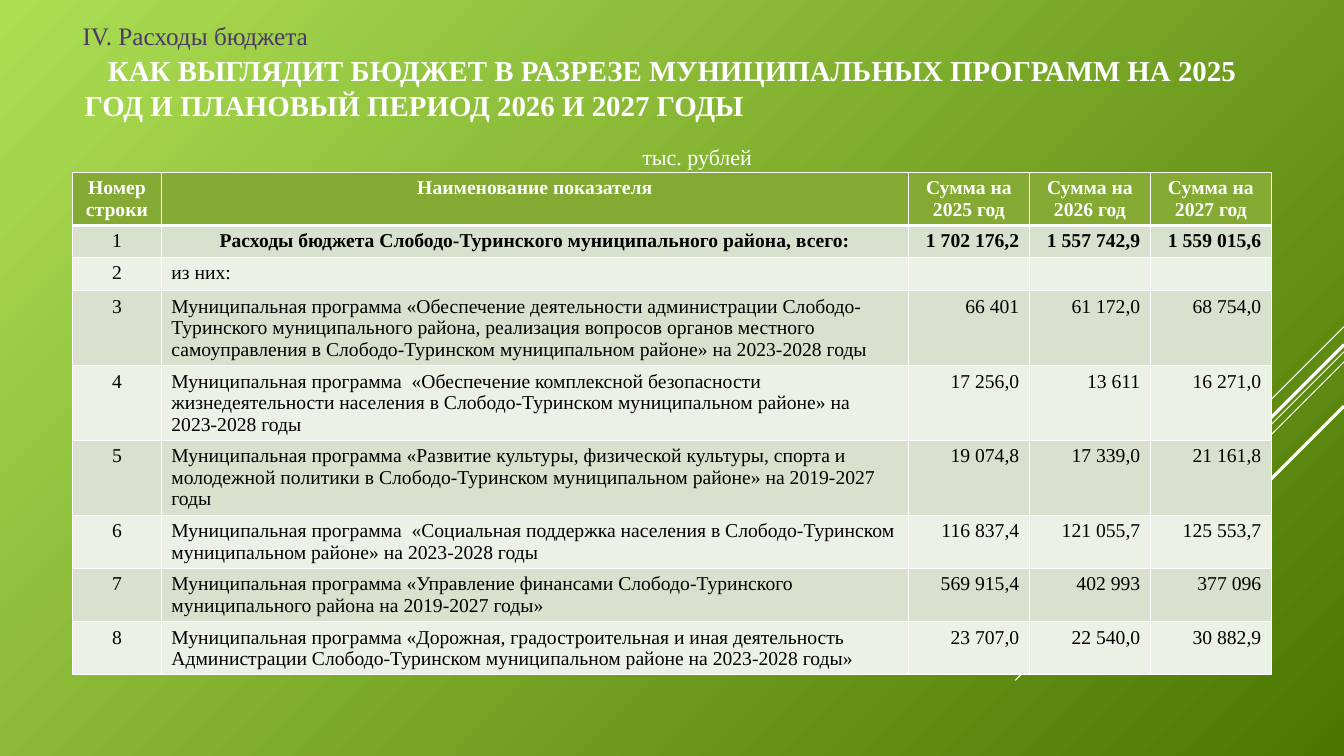
from dataclasses import dataclass

from lxml import etree
from pptx import Presentation
from pptx import util as u
from pptx.dml.color import RGBColor
from pptx.enum import shapes, text
from pptx.oxml import ns


@dataclass(frozen=True)
class Theme:
    font: str = "Times New Roman"
    bg_light: str = "ACDE54"
    bg_dark: str = "4B7700"
    white: str = "FFFFFF"
    black: str = "000000"
    section: str = "4C376B"
    header: str = "84AA33"
    bands: tuple = ("D8E1CD", "ECF1E8")
    section_size: float = 18
    title_size: float = 20.6
    title_leading: float = 25
    units_size: float = 15.7
    table_size: int = 14
    table_leading: float = 15.4
    rule: float = 0.96
    header_rule: float = 3


T = Theme()
LEFT, WIDTH = 0.72, 11.89
ALIGN = text.PP_ALIGN

HEADER = ["Номер строки", "Наименование показателя",
          "Сумма на 2025 год", "Сумма на 2026 год", "Сумма на 2027 год"]
ROWS = [
    ("Расходы бюджета Слободо-Туринского муниципального района, всего:",
     "1 702 176,2", "1 557 742,9", "1 559 015,6"),
    ("из них:", "", "", ""),
    ("Муниципальная программа «Обеспечение деятельности администрации Слободо-Туринского "
     "муниципального района, реализация вопросов органов местного самоуправления в "
     "Слободо-Туринском муниципальном районе» на 2023-2028 годы",
     "66 401", "61 172,0", "68 754,0"),
    ("Муниципальная программа  «Обеспечение комплексной безопасности жизнедеятельности "
     "населения в Слободо-Туринском муниципальном районе» на 2023-2028 годы",
     "17 256,0", "13 611", "16 271,0"),
    ("Муниципальная программа «Развитие культуры, физической культуры, спорта и молодежной "
     "политики в Слободо-Туринском муниципальном районе» на 2019-2027 годы",
     "19 074,8", "17 339,0", "21 161,8"),
    ("Муниципальная программа  «Социальная поддержка населения в Слободо-Туринском "
     "муниципальном районе» на 2023-2028 годы",
     "116 837,4", "121 055,7", "125 553,7"),
    ("Муниципальная программа «Управление финансами Слободо-Туринского муниципального "
     "района на 2019-2027 годы»",
     "569 915,4", "402 993", "377 096"),
    ("Муниципальная программа «Дорожная, градостроительная и иная деятельность "
     "Администрации Слободо-Туринском муниципальном районе на 2023-2028 годы»",
     "23 707,0", "22 540,0", "30 882,9"),
]
COL_WIDTHS = [0.88, 7.41, 1.2, 1.2, 1.2]
LINE_COUNTS = [2, 1, 1, 3, 3, 3, 2, 2, 2]


def rgb(value):
    return RGBColor.from_string(value)


def add_run(p, words, size, color, bold=False):
    r = p.add_run()
    r.text = words
    r.font.name, r.font.size, r.font.bold = T.font, u.Pt(size), bold
    r.font.color.rgb = rgb(color)


def set_indent(p, margin, first_line=0):
    pPr = p._p.get_or_add_pPr()
    pPr.set("marL", str(u.Inches(margin)))
    pPr.set("indent", str(u.Inches(first_line)))


def add_background(s):
    fill = s.background.fill
    fill.gradient()
    fill.gradient_angle = 315
    for stop, color in zip(fill.gradient_stops, (T.bg_light, T.bg_dark)):
        stop.color.rgb = rgb(color)


def add_diagonals(s, right):
    # Each line falls to the left at 45 degrees: start height, run, weight
    for y, run, weight in [(3.24, 1, 0.75), (3.49, 3.26, 0.75), (3.59, 2.07, 0.75),
                           (3.42, 1.91, 2.25), (4.03, 1.39, 2.25)]:
        line = s.shapes.add_connector(
            shapes.MSO_CONNECTOR.STRAIGHT, u.Inches(right), u.Inches(y),
            u.Inches(right - run), u.Inches(y + run))
        line.line.color.rgb = rgb(T.white)
        line.line.width = u.Pt(weight)
        etree.SubElement(line._element.spPr, ns.qn("a:effectLst"))


def add_section(s, x, y, w, h):
    sp = s.shapes.add_textbox(u.Inches(x), u.Inches(y), u.Inches(w), u.Inches(h))
    tf = sp.text_frame
    tf.word_wrap = True
    tf.vertical_anchor = text.MSO_ANCHOR.MIDDLE
    add_run(tf.paragraphs[0], "IV. Расходы бюджета", T.section_size, T.section)


def add_title(s, x, y, w, h):
    sp = s.shapes.title
    sp.left, sp.top, sp.width, sp.height = (u.Inches(v) for v in (x, y, w, h))
    tf = sp.text_frame
    tf.word_wrap = True
    tf.auto_size = text.MSO_AUTO_SIZE.NONE
    tf.vertical_anchor = text.MSO_ANCHOR.TOP
    p = tf.paragraphs[0]
    p.alignment, p.line_spacing = ALIGN.LEFT, u.Pt(T.title_leading)
    set_indent(p, 0.02, 0.23)
    add_run(p, "КАК ВЫГЛЯДИТ БЮДЖЕТ В РАЗРЕЗЕ МУНИЦИПАЛЬНЫХ ПРОГРАММ НА 2025 ГОД "
               "И ПЛАНОВЫЙ ПЕРИОД 2026 И 2027 ГОДЫ", T.title_size, T.white, True)
    # Units of measure
    p = tf.add_paragraph()
    p.alignment, p.space_before = ALIGN.CENTER, u.Pt(15)
    set_indent(p, 0.5)
    add_run(p, "тыс. рублей", T.units_size, T.white)


def set_borders(cell, top, bottom):
    tcPr = cell._tc.get_or_add_tcPr()
    sides = [("lnL", T.rule), ("lnR", T.rule), ("lnT", top), ("lnB", bottom)]
    for i, (side, weight) in enumerate(sides):
        ln = etree.Element(ns.qn("a:" + side), w=str(u.Pt(weight)))
        fill = etree.SubElement(ln, ns.qn("a:solidFill"))
        etree.SubElement(fill, ns.qn("a:srgbClr"), val=T.white)
        tcPr.insert(i, ln)


def fill_cell(cell, words, row, col):
    header, total = row == 0, row == 1
    cell.fill.solid()
    cell.fill.fore_color.rgb = rgb(T.header if header else T.bands[(row - 1) % 2])
    set_borders(cell, T.header_rule if total else T.rule,
                T.header_rule if header else T.rule)
    p = cell.text_frame.paragraphs[0]
    p.line_spacing = u.Pt(T.table_leading)
    if header or col == 0 or (total and col == 1):
        p.alignment = ALIGN.CENTER
    else:
        p.alignment = ALIGN.LEFT if col == 1 else ALIGN.RIGHT
    if words:
        add_run(p, words, T.table_size, T.white if header else T.black,
                header or (total and col > 0))
    else:
        end = etree.SubElement(p._p, ns.qn("a:endParaRPr"))
        end.set("sz", str(T.table_size * 100))


def add_budget_table(s, x, y, w):
    heights = [0.1 + 0.21 * n for n in LINE_COUNTS]
    table = s.shapes.add_table(len(heights), len(COL_WIDTHS), u.Inches(x), u.Inches(y),
                               u.Inches(w), u.Inches(sum(heights))).table
    for column, width in zip(table.columns, COL_WIDTHS):
        column.width = u.Inches(width)
    lines = [HEADER] + [(str(n), *row) for n, row in enumerate(ROWS, 1)]
    for i, (height, line) in enumerate(zip(heights, lines)):
        table.rows[i].height = u.Inches(height)
        for j, words in enumerate(line):
            fill_cell(table.cell(i, j), words, i, j)


def main():
    prs = Presentation()
    prs.slide_width, prs.slide_height = u.Inches(13.33), u.Inches(7.5)
    s = prs.slides.add_slide(prs.slide_layouts[5])
    add_background(s)
    add_diagonals(s, 13.33)
    add_section(s, LEFT, 0.19, WIDTH, 0.32)
    add_title(s, LEFT, 0.47, WIDTH, 1.24)
    add_budget_table(s, LEFT, 1.71, WIDTH)
    prs.save("out.pptx")


if __name__ == "__main__":
    main()
